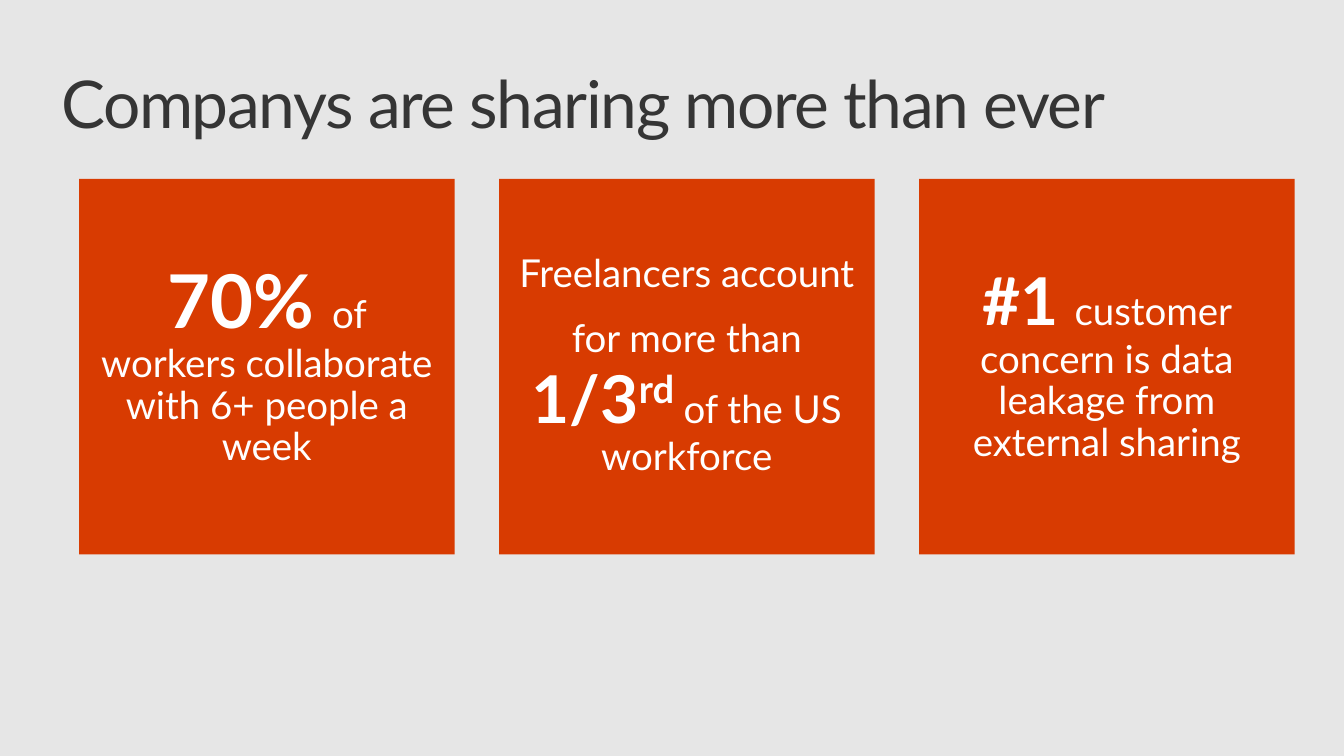
from pptx import Presentation
from pptx.dml.color import RGBColor
from pptx.enum.shapes import MSO_SHAPE as Shape
from pptx.enum.text import MSO_ANCHOR as Anchor, MSO_AUTO_SIZE as Fit, PP_ALIGN as Align
from pptx.util import Pt


def paint(color, code):
    color.rgb = RGBColor.from_string(code)


def setup(frame, side, edge, anchor, align):
    frame.word_wrap = True
    frame.auto_size = Fit.NONE
    frame.vertical_anchor = anchor
    frame.margin_left = frame.margin_right = Pt(side)
    frame.margin_top = frame.margin_bottom = Pt(edge)
    para = frame.paragraphs[0]
    para.alignment = align
    para.line_spacing = 0.9
    return para


deck = Presentation()
deck.slide_width, deck.slide_height = Pt(979.2), Pt(550.8)
slide = deck.slides.add_slide(deck.slide_layouts[5])
slide.background.fill.solid()
paint(slide.background.fill.fore_color, "E6E6E6")

title = slide.shapes.title
title.left, title.top, title.width, title.height = Pt(33.1), Pt(44.6), Pt(881.3), Pt(42.5)
title.text_frame.text = "Companys are sharing more than ever"
para = setup(title.text_frame, 11.5, 7.2, Anchor.TOP, Align.LEFT)
run = para.runs[0]
run.font.name, run.font.size = "Lato", Pt(48)
paint(run.font.color, "353535")
run.font._element.set("spc", "-100")

cards = [
    [("70% ", 54, True, 0), ("of workers collaborate with 6+ people a week", 28, False, 0)],
    [
        ("Freelancers account for more than", 28, False, 0),
        (" ", 48, False, 0),
        ("1/3", 48, True, 0),
        ("rd ", 48, True, 30),
        ("of the US workforce", 28, False, 0),
    ],
    [("#1 ", 48, True, 0), ("customer concern is data leakage from external sharing", 28, False, 0)],
]
side = 273.6
step = 306

for col, parts in enumerate(cards):
    card = slide.shapes.add_shape(
        Shape.RECTANGLE, Pt(57.6 + col * step), Pt(130.3), Pt(side), Pt(side))
    card.shadow.inherit = False
    card.fill.solid()
    paint(card.fill.fore_color, "D83B01")
    card.line.fill.background()
    para = setup(card.text_frame, 14.4, 11.5, Anchor.MIDDLE, Align.CENTER)
    for text, size, bold, lift in parts:
        run = para.add_run()
        run.text = text
        run.font.name, run.font.size, run.font.bold = "Lato", Pt(size), bold
        paint(run.font.color, "FFFFFF")
        if lift:
            run.font._element.set("baseline", str(lift * 1000))

deck.save("out.pptx")
